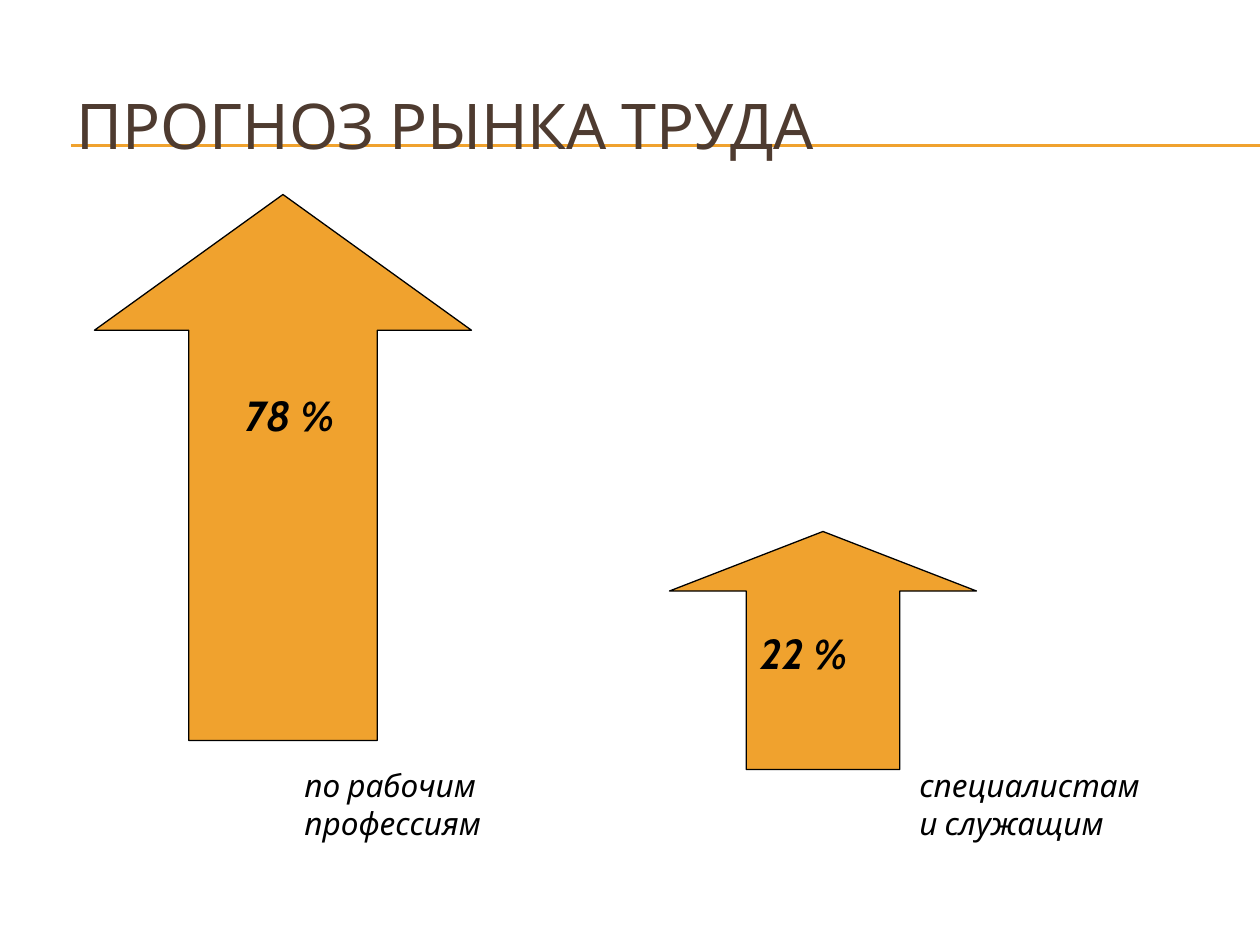
import dataclasses

import pptx
import pptx.dml.color
import pptx.enum.shapes
import pptx.enum.text
import pptx.oxml.ns
import pptx.util
from lxml import etree

EMU_PER_PX = 914400 / 126


@dataclasses.dataclass(frozen=True)
class Theme:
    font: str = "Cabin"
    accent: str = "F0A22E"
    title: str = "4E3B30"
    ink: str = "000000"
    title_size: int = 36
    value_size: int = 24
    label_size: int = 18
    line_width: float = 0.75


THEME = Theme()


def px(n):
    return pptx.util.Emu(round(n * EMU_PER_PX))


def rgb(value):
    return pptx.dml.color.RGBColor.from_string(value)


def add_run(p, text, size, color, bold=False, italic=False):
    r = p.add_run()
    r.text = text
    r.font.name = THEME.font
    r.font.size = pptx.util.Pt(size)
    r.font.color.rgb = rgb(color)
    r.font.bold = bold
    r.font.italic = italic


def style_line(line, color):
    line.color.rgb = rgb(color)
    line.width = pptx.util.Pt(THEME.line_width)


def add_rule(s, x1, x2, y):
    line = s.shapes.add_connector(
        pptx.enum.shapes.MSO_CONNECTOR.STRAIGHT, px(x1), px(y), px(x2), px(y))
    style_line(line.line, THEME.accent)
    sp_pr = line._element.spPr
    etree.SubElement(sp_pr, pptx.oxml.ns.qn("a:effectLst"))


def set_title(s, text, box):
    sp = s.shapes.title
    sp.left, sp.top, sp.width, sp.height = map(px, box)
    tf = sp.text_frame
    tf.vertical_anchor = pptx.enum.text.MSO_ANCHOR.MIDDLE
    p = tf.paragraphs[0]
    p.alignment = pptx.enum.text.PP_ALIGN.LEFT
    add_run(p, text, THEME.title_size, THEME.title)


def add_up_arrow(s, box, head):
    """Add a right arrow turned upwards; box is its frame before turning."""
    sp = s.shapes.add_shape(
        pptx.enum.shapes.MSO_SHAPE.RIGHT_ARROW, *map(px, box))
    sp.rotation = 270
    sp.adjustments[0] = 0.5
    sp.adjustments[1] = head
    sp.shadow.inherit = False
    sp.fill.solid()
    sp.fill.fore_color.rgb = rgb(THEME.accent)
    style_line(sp.line, THEME.ink)


def add_text(s, text, box, size, bold=False):
    tf = s.shapes.add_textbox(*map(px, box)).text_frame
    tf.word_wrap = True
    tf.auto_size = pptx.enum.text.MSO_AUTO_SIZE.SHAPE_TO_FIT_TEXT
    add_run(tf.paragraphs[0], text, size, THEME.ink, bold, italic=True)


def main():
    prs = pptx.Presentation()
    prs.slide_width, prs.slide_height = px(1260), px(945)
    s = prs.slides.add_slide(prs.slide_layouts[5])

    # Double rule running behind the title
    for y in (145, 146):
        add_rule(s, 71, 1260, y)
    set_title(s, "ПРОГНОЗ РЫНКА ТРУДА", (64, 45, 1134, 158))
    # Keep the title in front of the rule
    s.shapes._spTree.append(s.shapes.title._element)

    # Arrows with the share of each group
    add_up_arrow(s, (10, 279, 546, 377), 0.36)
    add_up_arrow(s, (704, 497, 238, 307), 0.25)

    # Share and group name of each arrow
    groups = (
        ("78 %", (233, 383), "по рабочим профессиям", 292, 248),
        ("22 %", (748, 621), "специалистам и служащим", 907, 267),
    )
    for value, (x, y), label, label_x, label_w in groups:
        add_text(s, value, (x, y, 129, 63), THEME.value_size, bold=True)
        add_text(s, label, (label_x, 760, label_w, 88), THEME.label_size)

    prs.save("out.pptx")


if __name__ == "__main__":
    main()
